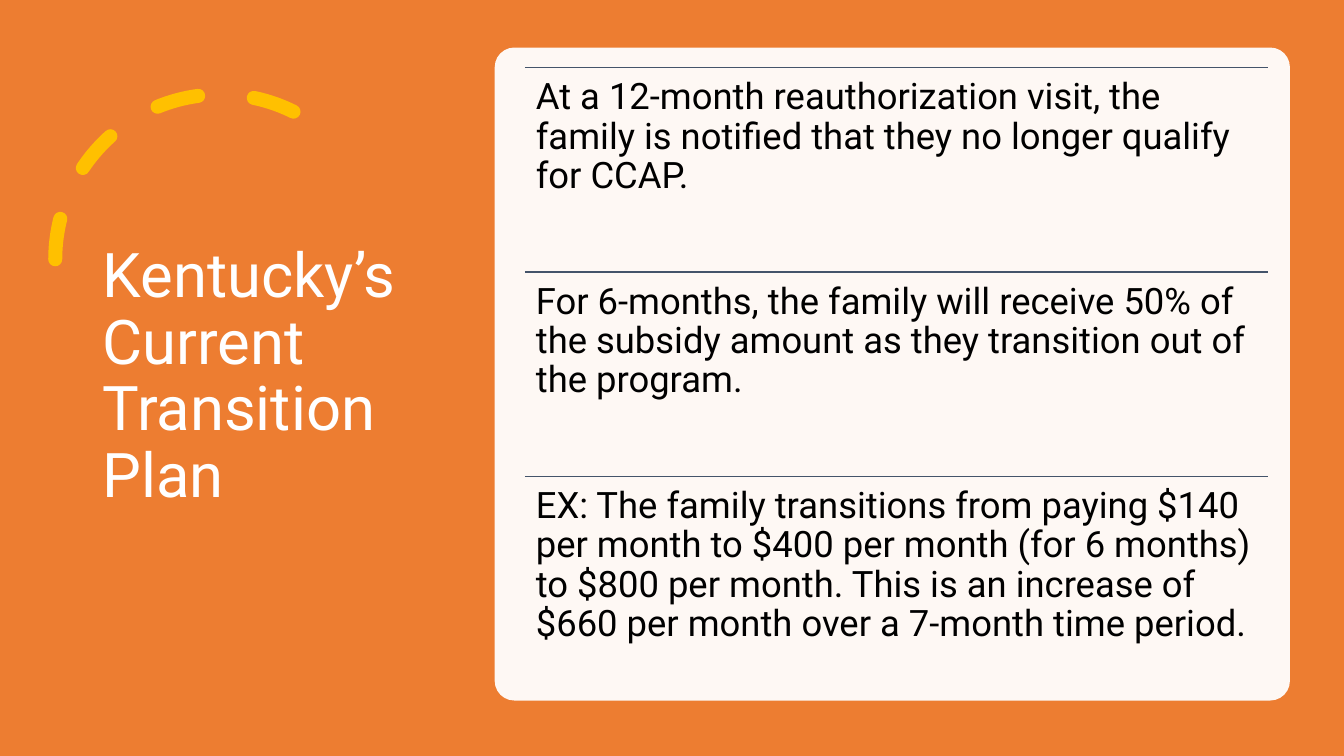
from dataclasses import dataclass

from pptx import Presentation
from pptx.dml.color import RGBColor
from pptx.enum.dml import MSO_LINE
from pptx.enum.shapes import MSO_CONNECTOR, MSO_SHAPE
from pptx.enum.text import MSO_ANCHOR
from pptx.oxml.ns import qn
from pptx.oxml.xmlchemy import OxmlElement
from pptx.shapes.autoshape import Shape
from pptx.slide import Slide
from pptx.util import Pt


@dataclass(frozen=True)
class Theme:
    font: str = "Roboto"
    orange: RGBColor = RGBColor(0xED, 0x7D, 0x31)
    gold: RGBColor = RGBColor(0xFF, 0xC0, 0x00)
    slate: RGBColor = RGBColor(0x44, 0x54, 0x6A)
    white: RGBColor = RGBColor(0xFF, 0xFF, 0xFF)
    black: RGBColor = RGBColor(0x00, 0x00, 0x00)
    title_size: float = 44
    body_size: float = 26


@dataclass(frozen=True)
class Area:
    left: float
    top: float
    width: float
    height: float

    def lengths(self) -> tuple[Pt, Pt, Pt, Pt]:
        return Pt(self.left), Pt(self.top), Pt(self.width), Pt(self.height)


THEME = Theme()
PAGE = Area(0, 0, 960, 540)
ARC = Area(39.5, 67.5, 235.5, 235.5)
TITLE = Area(66.2, 50.4, 232.6, 438.5)
CARD = Area(353.4, 34, 568, 466.4)
FIRST_STEP = Area(375, 48.2, 530.6, 146)
STEPS = (
    "At a 12-month reauthorization visit, the family is notified that they no longer qualify for CCAP.",
    "For 6-months, the family will receive 50% of the subsidy amount as they transition out of the program.",
    "EX: The family transitions from paying $140 per month to $400 per month (for 6 months) "
    "to $800 per month. This is an increase of $660 per month over a 7-month time period.",
)


def add_panel(page: Slide, kind: MSO_SHAPE, area: Area, color: RGBColor) -> Shape:
    panel = page.shapes.add_shape(kind, *area.lengths())
    panel.shadow.inherit = False
    panel.fill.solid()
    panel.fill.fore_color.rgb = color
    panel.line.fill.background()
    return panel


def add_card(page: Slide) -> None:
    """Draw the rounded, slightly transparent card behind the steps."""
    card = add_panel(page, MSO_SHAPE.ROUNDED_RECTANGLE, CARD, THEME.white)
    card.adjustments[0] = 0.03
    alpha = OxmlElement("a:alpha")
    alpha.set("val", "95000")
    card.element.spPr.find(qn("a:solidFill"))[0].append(alpha)


def add_dashed_arc(page: Slide) -> None:
    arc = page.shapes.add_shape(MSO_SHAPE.ARC, *ARC.lengths())
    arc.shadow.inherit = False
    arc.adjustments[0] = 146.13
    arc.adjustments[1] = 0
    arc.fill.background()
    arc.line.color.rgb = THEME.gold
    arc.line.width = Pt(10)
    arc.line.dash_style = MSO_LINE.DASH
    properties = arc.element.spPr
    properties.find(qn("a:ln")).set("cap", "rnd")
    properties.find(qn("a:xfrm")).set("flipH", "1")


def add_text(page: Slide, area: Area, text: str, size: float, color: RGBColor,
             anchor: MSO_ANCHOR, side_inset: float, end_inset: float) -> None:
    frame = page.shapes.add_textbox(*area.lengths()).text_frame
    frame.word_wrap = True
    frame.vertical_anchor = anchor
    frame.margin_left = frame.margin_right = Pt(side_inset)
    frame.margin_top = frame.margin_bottom = Pt(end_inset)
    frame.text = text
    paragraph = frame.paragraphs[0]
    paragraph.line_spacing = 0.9
    font = paragraph.runs[0].font
    font.name = THEME.font
    font.size = Pt(size)
    font.color.rgb = color


def add_rule(page: Slide, area: Area) -> None:
    """Draw a thin line along the top edge of the area."""
    rule = page.shapes.add_connector(
        MSO_CONNECTOR.STRAIGHT, Pt(area.left), Pt(area.top),
        Pt(area.left + area.width), Pt(area.top))
    rule.line.color.rgb = THEME.slate
    rule.line.width = Pt(1)
    rule.element.spPr.append(OxmlElement("a:effectLst"))


def main() -> None:
    deck = Presentation()
    deck.slide_width, deck.slide_height = Pt(PAGE.width), Pt(PAGE.height)
    page = deck.slides.add_slide(deck.slide_layouts[6])

    add_panel(page, MSO_SHAPE.RECTANGLE, PAGE, THEME.orange)
    add_dashed_arc(page)
    add_text(page, TITLE, "Kentucky’s Current Transition Plan", THEME.title_size,
             THEME.white, MSO_ANCHOR.MIDDLE, 7.2, 3.6)
    add_card(page)
    for index, step in enumerate(STEPS):
        top = FIRST_STEP.top + index * FIRST_STEP.height
        area = Area(FIRST_STEP.left, top, FIRST_STEP.width, FIRST_STEP.height)
        add_rule(page, area)
        add_text(page, area, step, THEME.body_size, THEME.black, MSO_ANCHOR.TOP, 7.8, 7.8)

    deck.save("out.pptx")


if __name__ == "__main__":
    main()
